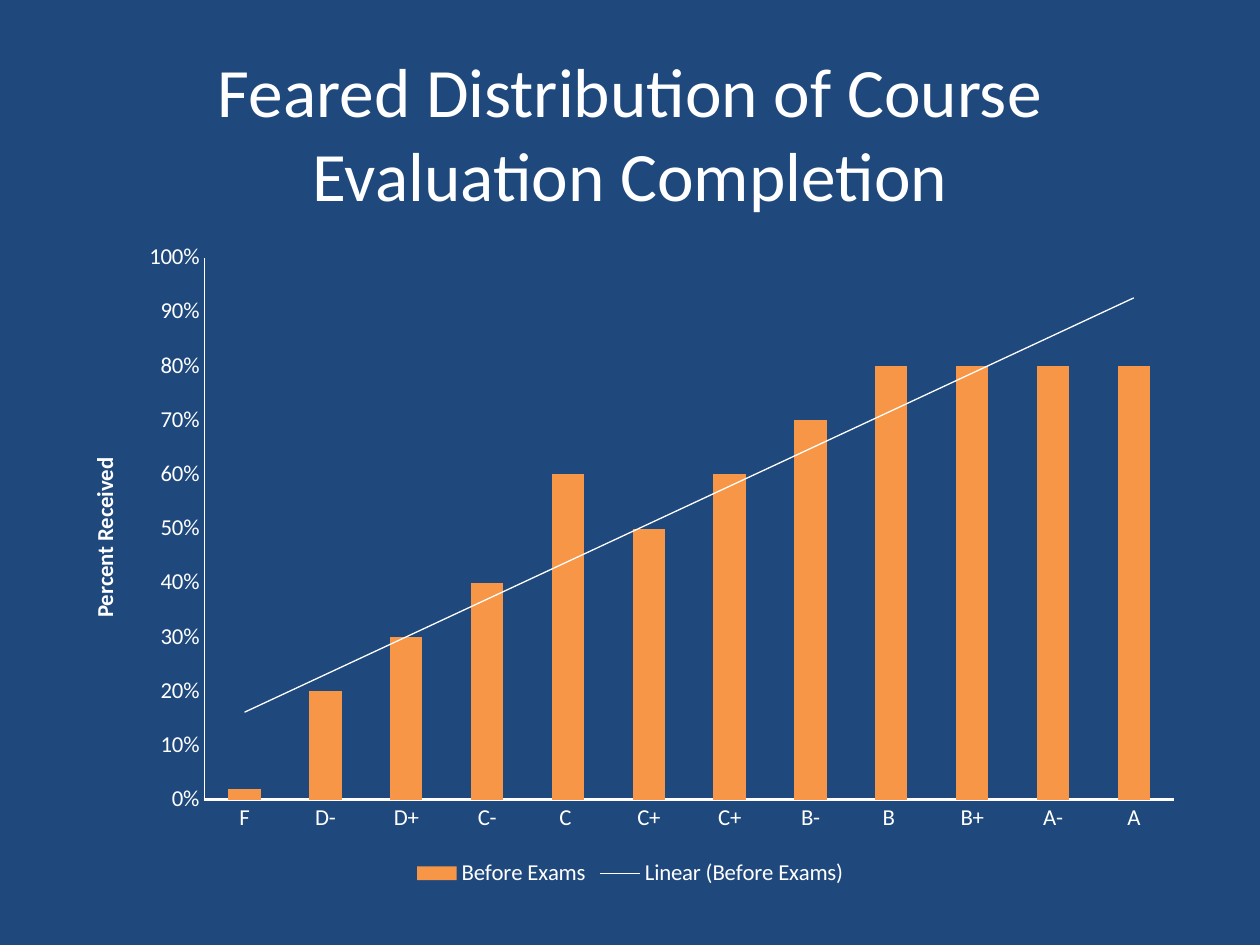
"""Builds the slide on feared course evaluation completion by grade."""
from lxml import etree
from pptx import Presentation, util as u
from pptx.chart.data import CategoryChartData
from pptx.dml.color import RGBColor
from pptx.enum import chart as ch, text
from pptx.oxml import ns

TITLE = "Feared Distribution of Course Evaluation Completion"
SERIES = "Before Exams"
VALUE_TITLE = "Percent Received"
GRADES = ["F", "D-", "D+", "C-", "C ", "C+", "C+", "B-", "B ", "B+", "A-", "A"]
SHARES = [0.02, 0.2, 0.3, 0.4, 0.6, 0.5, 0.6, 0.7, 0.8, 0.8, 0.8, 0.8]
FONT, NAVY, WHITE, ORANGE = "Calibri", "1F497D", "FFFFFF", "F79646"
WIDTH, HEIGHT, MARGIN = 10, 7.5, 0.5
TRENDLINE = f"""<c:trendline xmlns:c="{ns.nsuri('c')}" xmlns:a="{ns.nsuri('a')}">
<c:name>Linear ({SERIES})</c:name>
<c:spPr><a:ln w="9525"><a:solidFill><a:srgbClr val="{WHITE}"/></a:solidFill></a:ln></c:spPr>
<c:trendlineType val="linear"/><c:dispRSqr val="0"/><c:dispEq val="0"/></c:trendline>"""


def paint(fill, color):
    fill.solid()
    fill.fore_color.rgb = RGBColor.from_string(color)


def style(font, size, bold=False):
    font.name, font.size, font.bold = FONT, u.Pt(size), bold
    paint(font.fill, WHITE)


def band(top, height):
    return [u.Inches(n) for n in (MARGIN, top, WIDTH - 2 * MARGIN, height)]


def add_title(slide):
    frame = slide.shapes.add_textbox(*band(0.42, 1.25)).text_frame
    frame.word_wrap = True
    frame.vertical_anchor = text.MSO_ANCHOR.MIDDLE
    frame.text = TITLE
    heading = frame.paragraphs[0]
    heading.alignment = text.PP_ALIGN.CENTER
    style(heading.runs[0].font, 39.6)


def add_distribution(slide):
    data = CategoryChartData(number_format="0%")
    data.categories = GRADES
    data.add_series(SERIES, SHARES)
    chart = slide.shapes.add_chart(
        ch.XL_CHART_TYPE.COLUMN_CLUSTERED, *band(1.83, 5.25), data).chart
    style(chart.font, 18)
    chart.has_title = False
    chart.has_legend = True
    chart.legend.position = ch.XL_LEGEND_POSITION.BOTTOM
    chart.legend.include_in_layout = False
    style(chart.legend.font, 13)

    plot = chart.plots[0]
    plot.gap_width = 150
    plot.vary_by_categories = False
    bars = plot.series[0]
    paint(bars.format.fill, ORANGE)
    bars._element.find(ns.qn("c:cat")).addprevious(etree.fromstring(TRENDLINE))

    for axis, weight in ((chart.category_axis, 1.5), (chart.value_axis, 0.75)):
        axis.has_major_gridlines = False
        axis.major_tick_mark = axis.minor_tick_mark = ch.XL_TICK_MARK.NONE
        style(axis.tick_labels.font, 13)
        axis.format.line.width = u.Pt(weight)
        paint(axis.format.line.fill, WHITE)

    percent = chart.value_axis
    percent.minimum_scale, percent.maximum_scale, percent.major_unit = 0, 1, 0.1
    percent.tick_labels.number_format = "0%"
    percent.tick_labels.number_format_is_linked = False
    caption = percent.axis_title.text_frame
    caption.text = VALUE_TITLE
    style(caption.paragraphs[0].runs[0].font, 13, bold=True)


def main():
    deck = Presentation()
    deck.slide_width, deck.slide_height = u.Inches(WIDTH), u.Inches(HEIGHT)
    slide = deck.slides.add_slide(deck.slide_layouts[6])
    paint(slide.background.fill, NAVY)
    add_title(slide)
    add_distribution(slide)
    deck.save("out.pptx")


if __name__ == "__main__":
    main()
